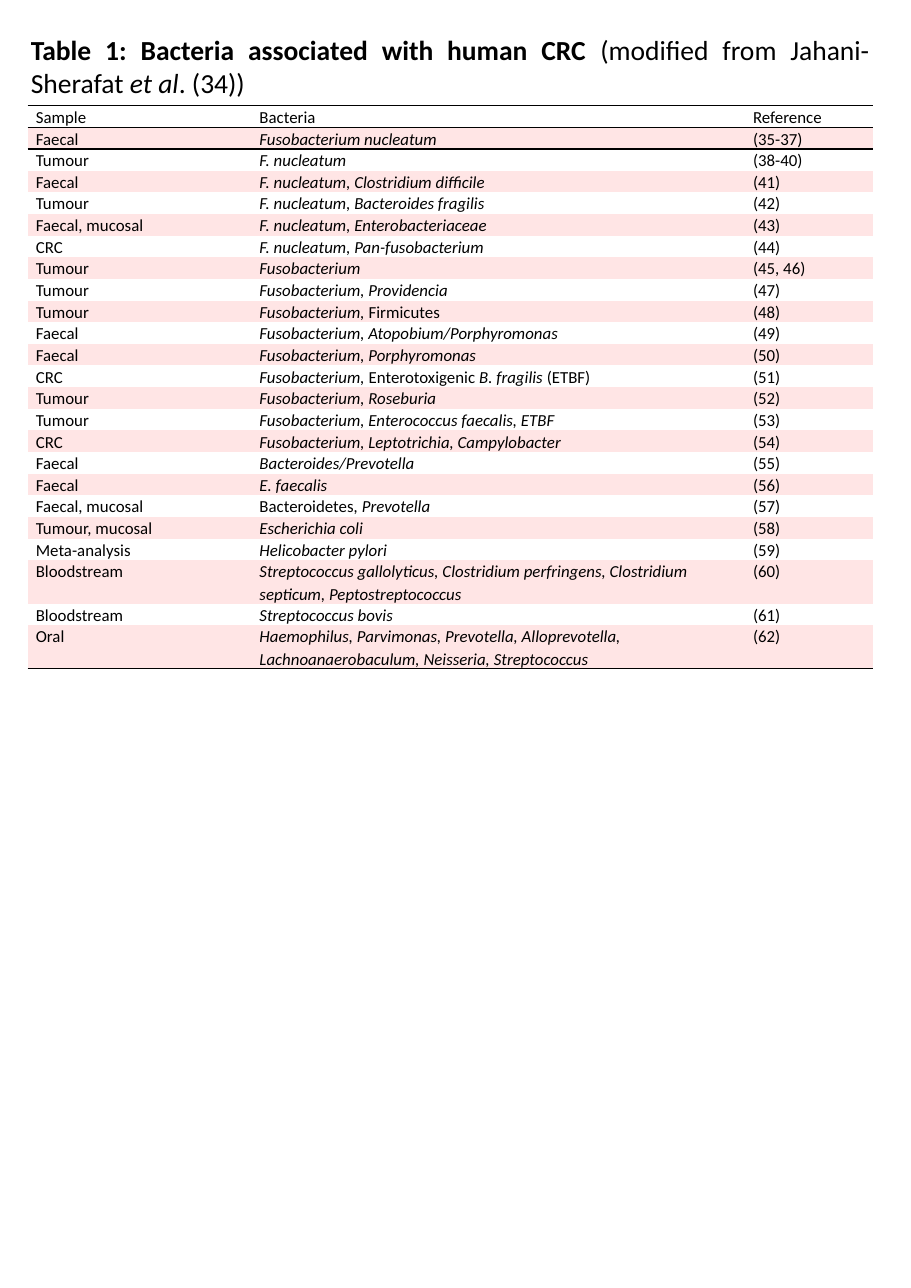
import pptx
import pptx.util
import pptx.dml.color
import pptx.enum.text
import pptx.oxml
import pptx.oxml.ns

Pt = pptx.util.Pt
RGB = pptx.dml.color.RGBColor.from_string

# Text between asterisks is italic.
TITLE = [("Table 1: Bacteria associated with human CRC", True),
         (" (modified from Jahani-Sherafat *et al*. (34))", False)]
ROWS = [
    ("Sample", "Bacteria", "Reference"),
    ("Faecal", "*Fusobacterium nucleatum*", "(35-37)"),
    ("Tumour", "*F. nucleatum*", "(38-40)"),
    ("Faecal", "*F. nucleatum, Clostridium difficile*", "(41)"),
    ("Tumour", "*F. nucleatum, Bacteroides fragilis*", "(42)"),
    ("Faecal, mucosal", "*F. nucleatum, Enterobacteriaceae*", "(43)"),
    ("CRC", "*F. nucleatum, Pan-fusobacterium*", "(44)"),
    ("Tumour", "*Fusobacterium*", "(45, 46)"),
    ("Tumour", "*Fusobacterium, Providencia*", "(47)"),
    ("Tumour", "*Fusobacterium, *Firmicutes", "(48)"),
    ("Faecal", "*Fusobacterium, Atopobium/Porphyromonas*", "(49)"),
    ("Faecal", "*Fusobacterium, Porphyromonas*", "(50)"),
    ("CRC", "*Fusobacterium, *Enterotoxigenic *B. fragilis* (ETBF)", "(51)"),
    ("Tumour", "*Fusobacterium, Roseburia*", "(52)"),
    ("Tumour", "*Fusobacterium, Enterococcus faecalis, ETBF*", "(53)"),
    ("CRC", "*Fusobacterium, Leptotrichia, Campylobacter*", "(54)"),
    ("Faecal", "*Bacteroides/Prevotella*", "(55)"),
    ("Faecal", "*E. faecalis*", "(56)"),
    ("Faecal, mucosal", "Bacteroidetes*, Prevotella*", "(57)"),
    ("Tumour, mucosal", "*Escherichia coli*", "(58)"),
    ("Meta-analysis", "*Helicobacter pylori*", "(59)"),
    ("Bloodstream", "*Streptococcus gallolyticus, Clostridium perfringens, "
     "Clostridium septicum, Peptostreptococcus*", "(60)"),
    ("Bloodstream", "*Streptococcus bovis*", "(61)"),
    ("Oral", "*Haemophilus, Parvimonas, Prevotella, Alloprevotella, "
     "Lachnoanaerobaculum, Neisseria, Streptococcus*", "(62)"),
]
COLORS = {"ink": "000000", "band": "FFE5E5"}
FONT = "Calibri"
PAGE = (595.4, 841.7)
TITLE_BOX = (13, 18, 562.3, 51.1)
TABLE_AT = (18, 69.1)
COLS = (146.2, 322.6, 83.5)
ROW_H = 13
INSETS = {"margin_left": Pt(5.4), "margin_right": Pt(5.4),
          "margin_top": 0, "margin_bottom": 0}
NO_STYLE = "{2D5ABB26-0587-4C30-8999-92F81FD0307C}"


def put(item, values):
    for name, value in values.items():
        setattr(item, name, value)


def write(para, text, size, bold=False):
    """Add text to para, with the parts between asterisks in italics."""
    for index, part in enumerate(text.split("*")):
        if part:
            run = para.add_run()
            run.text = part
            put(run.font, {"name": FONT, "size": Pt(size), "bold": bold,
                           "italic": index % 2 == 1})
            run.font.color.rgb = RGB(COLORS["ink"])


def rule(cell, side):
    """Draw a one-point border on side T or B of the cell."""
    cell._tc.get_or_add_tcPr().append(pptx.oxml.parse_xml(
        f'<a:ln{side} {pptx.oxml.ns.nsdecls("a")} w="{Pt(1)}"><a:solidFill>'
        f'<a:srgbClr val="{COLORS["ink"]}"/></a:solidFill></a:ln{side}>'))


def add_title(slide):
    box = slide.shapes.add_textbox(*map(Pt, TITLE_BOX))
    put(box.text_frame, {"word_wrap": True,
        "auto_size": pptx.enum.text.MSO_AUTO_SIZE.SHAPE_TO_FIT_TEXT})
    para = box.text_frame.paragraphs[0]
    para.alignment = pptx.enum.text.PP_ALIGN.JUSTIFY
    for text, bold in TITLE:
        write(para, text, 18, bold)


def add_grid(slide):
    size = (sum(COLS), ROW_H * len(ROWS))
    frame = slide.shapes.add_table(len(ROWS), len(COLS),
                                   *map(Pt, TABLE_AT + size))
    table = frame.table
    put(table, {"first_row": False, "horz_banding": False})
    for style in frame.element.iter(pptx.oxml.ns.qn("a:tableStyleId")):
        style.text = NO_STYLE
    for col, width in zip(table.columns, COLS):
        col.width = Pt(width)
    sides = {0: "TB", 1: "T", len(ROWS) - 1: "B"}
    for r, row in enumerate(ROWS):
        table.rows[r].height = Pt(ROW_H)
        for c, text in enumerate(row):
            cell = table.cell(r, c)
            put(cell, INSETS)
            for side in sides.get(r, ""):
                rule(cell, side)
            if r % 2:
                cell.fill.solid()
                cell.fill.fore_color.rgb = RGB(COLORS["band"])
            else:
                cell.fill.background()
            para = cell.text_frame.paragraphs[0]
            para.line_spacing = 1.07
            write(para, text, 11)


def main():
    deck = pptx.Presentation()
    put(deck, dict(zip(("slide_width", "slide_height"), map(Pt, PAGE))))
    slide = deck.slides.add_slide(deck.slide_layouts[6])
    add_title(slide)
    add_grid(slide)
    deck.save("out.pptx")


if __name__ == "__main__":
    main()
